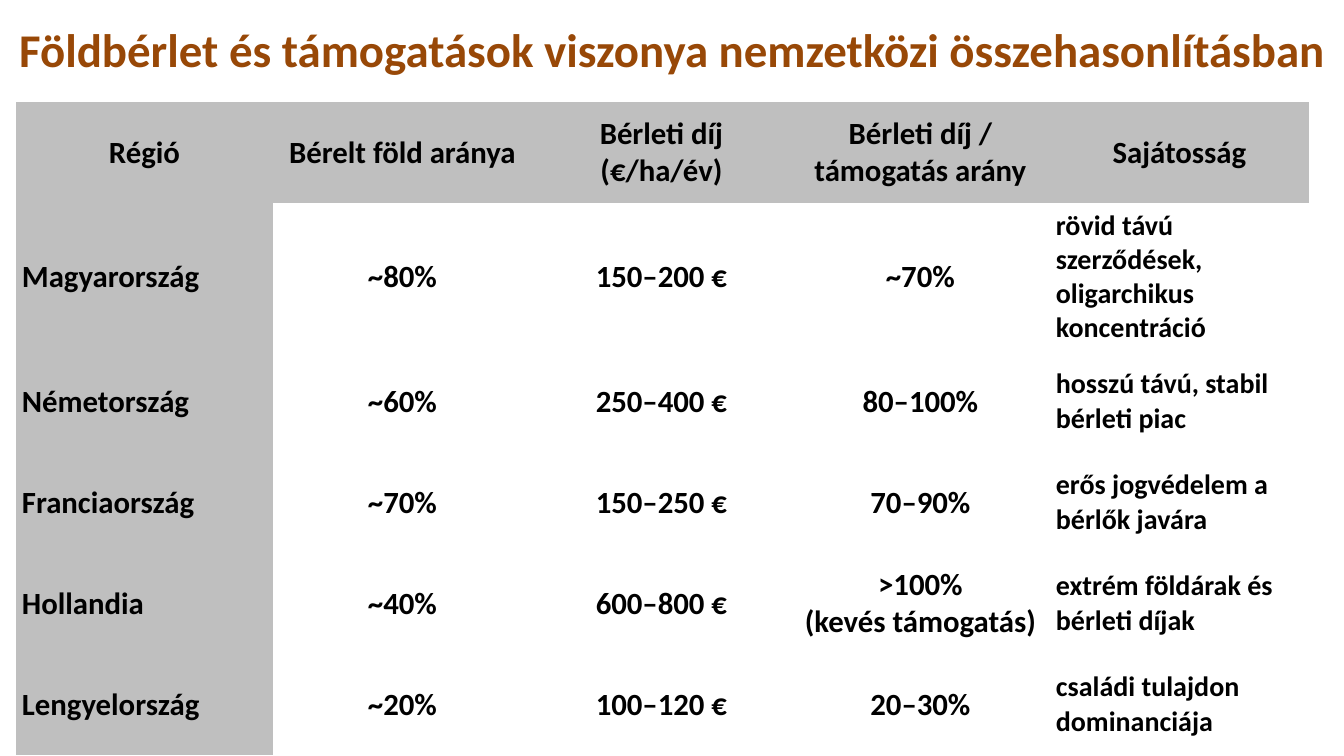
from pptx import Presentation
from pptx.dml.color import RGBColor
from pptx.enum import text
from pptx.util import Pt

WIDE, HIGH = 1344, 756
SCALE = 12192000 / WIDE
HUES = {"title": "984807", "ink": "000000", "head": "BFBFBF"}
COLS = [257] + [259] * 4
ROWS = [101, 148] + [101] * 4
PLAIN = "{2D5ABB26-0587-4C30-8999-92F81FD0307C}"  # table style without grid
DATA = [
    ("Régió", "Bérelt föld aránya", "Bérleti díj (€/ha/év)",
     "Bérleti díj / támogatás arány", "Sajátosság"),
    ("Magyarország", "~80%", "150–200 €", "~70%",
     "rövid távú szerződések, oligarchikus koncentráció"),
    ("Németország", "~60%", "250–400 €", "80–100%",
     "hosszú távú, stabil bérleti piac"),
    ("Franciaország", "~70%", "150–250 €", "70–90%",
     "erős jogvédelem a bérlők javára"),
    ("Hollandia", "~40%", "600–800 €", ">100%\n(kevés támogatás)",
     "extrém földárak és bérleti díjak"),
    ("Lengyelország", "~20%", "100–120 €", "20–30%",
     "családi tulajdon dominanciája"),
]


def px(n):
    return round(n * SCALE)


def write(frame, words, size=22, hue="ink", align=text.PP_ALIGN.CENTER):
    frame.text = words
    for para in frame.paragraphs:
        para.alignment = align
        for run in para.runs:
            font = run.font
            font.name, font.size, font.bold = "Calibri", Pt(size), True
            font.color.rgb = RGBColor.from_string(HUES[hue])


def add_title(slide):
    title = slide.shapes.title
    title.left, title.top, title.width, title.height = map(px, (0, 8, WIDE, 81))
    frame = title.text_frame
    frame.word_wrap = True
    frame.auto_size = text.MSO_AUTO_SIZE.NONE
    frame.vertical_anchor = text.MSO_ANCHOR.MIDDLE
    frame.margin_left = frame.margin_right = px(13)
    frame.margin_top = frame.margin_bottom = px(7)
    write(frame, "Földbérlet és támogatások viszonya nemzetközi összehasonlításban",
          size=33.5, hue="title")


def fill_cell(cell, words, row, col):
    cell.margin_left = cell.margin_right = px(6)
    cell.margin_top = cell.margin_bottom = px(3)
    cell.vertical_anchor = text.MSO_ANCHOR.MIDDLE
    if row == 0 or col == 0:
        cell.fill.solid()
        cell.fill.fore_color.rgb = RGBColor.from_string(HUES["head"])
    else:
        cell.fill.background()
    last = len(COLS) - 1
    side = row > 0 and col in (0, last)
    write(cell.text_frame, words, size=20 if row and col == last else 22,
          align=text.PP_ALIGN.LEFT if side else text.PP_ALIGN.CENTER)


def add_grid(slide):
    box = map(px, (16, 102, sum(COLS), sum(ROWS)))
    table = slide.shapes.add_table(len(ROWS), len(COLS), *box).table
    table.horz_banding = False
    table._tbl.tblPr[0].text = PLAIN
    for col, width in zip(table.columns, COLS):
        col.width = px(width)
    for row, height in zip(table.rows, ROWS):
        row.height = px(height)
    for r, line in enumerate(DATA):
        for c, words in enumerate(line):
            fill_cell(table.cell(r, c), words, r, c)


def main():
    deck = Presentation()
    deck.slide_width, deck.slide_height = px(WIDE), px(HIGH)
    slide = deck.slides.add_slide(deck.slide_layouts[5])
    add_title(slide)
    add_grid(slide)
    deck.save("out.pptx")


if __name__ == "__main__":
    main()
